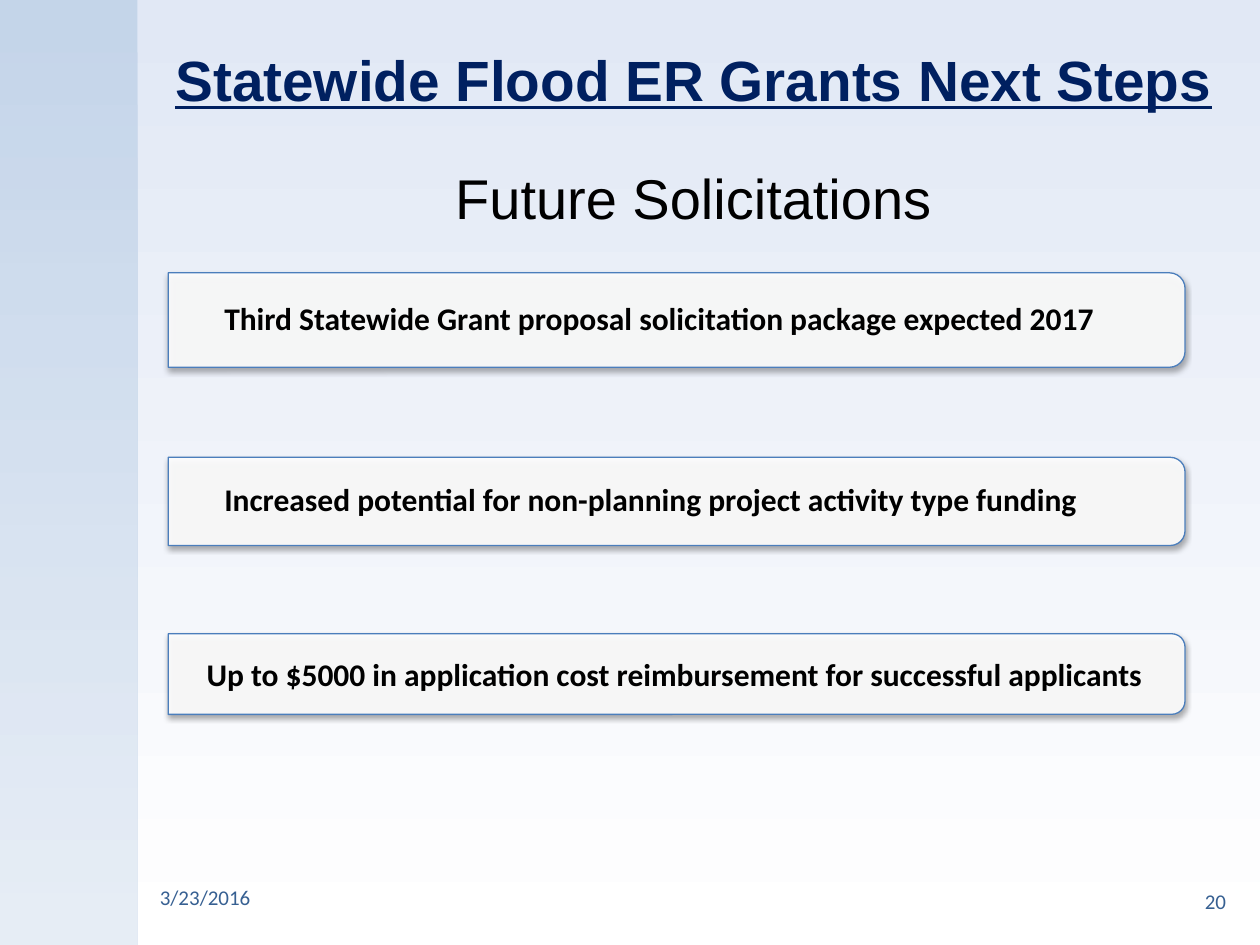
from lxml import etree
from pptx import Presentation
from pptx.dml.color import RGBColor
from pptx.enum.shapes import MSO_SHAPE
from pptx.enum.text import MSO_ANCHOR, MSO_AUTO_SIZE, PP_ALIGN
from pptx.oxml.ns import qn
from pptx.util import Inches, Pt

COLORS = {
    "sky": "E1E8F5", "white": "FFFFFF", "band_top": "B9CDE5", "band_bottom": "DCE6F2",
    "navy": "002060", "black": "000000", "footer": "376092", "outline": "4B7EBC",
}


def style_text(shape, text, size, color, font="Calibri", align=PP_ALIGN.LEFT,
               bold=False, anchor=MSO_ANCHOR.MIDDLE):
    frame = shape.text_frame
    frame.text = text
    frame.word_wrap = True
    frame.auto_size = MSO_AUTO_SIZE.NONE
    frame.vertical_anchor = anchor
    paragraph = frame.paragraphs[0]
    paragraph.alignment = align
    paragraph.font.name = font
    paragraph.font.size = Pt(size)
    paragraph.font.bold = bold
    paragraph.font.color.rgb = RGBColor.from_string(COLORS[color])
    return paragraph


def fill_gradient(fill, top, bottom):
    fill.gradient()
    fill.gradient_angle = 270
    for stop, name in zip(fill.gradient_stops, (top, bottom)):
        stop.color.rgb = RGBColor.from_string(COLORS[name])


presentation = Presentation()
presentation.slide_width = Inches(10)
presentation.slide_height = Inches(7.5)
slide = presentation.slides.add_slide(presentation.slide_layouts[1])
shapes = slide.shapes
fill_gradient(slide.background.fill, "sky", "white")

side_band = shapes.add_shape(MSO_SHAPE.RECTANGLE, 0, 0, Inches(1.09), Inches(7.5))
side_band.shadow.inherit = False
side_band.line.fill.background()
fill_gradient(side_band.fill, "band_top", "band_bottom")
for color in side_band.fill._xPr.iter(qn("a:srgbClr")):
    etree.SubElement(color, qn("a:alpha"), val="70000")

title, body = shapes.title, slide.placeholders[1]
for placeholder, top, height in ((title, 0, 1.25), (body, 1.25, 5.58)):
    placeholder.left, placeholder.top = Inches(1.17), Inches(top)
    placeholder.width, placeholder.height = Inches(8.67), Inches(height)
heading = style_text(title, "Statewide Flood ER Grants Next Steps", 32.4, "navy",
                     "Arial", PP_ALIGN.CENTER, True)
heading.font.underline = True
subheading = style_text(body, "Future Solicitations", 32, "black", "Arial",
                        PP_ALIGN.CENTER, anchor=MSO_ANCHOR.TOP)
properties = subheading._p.get_or_add_pPr()
properties.set("marL", "0")
properties.set("indent", "0")
properties.insert_element_before(etree.Element(qn("a:buNone")), "a:tabLst", "a:defRPr")

for text, left, top, align in (
    ("3/23/2016", 1.17, 6.92, PP_ALIGN.LEFT),
    ("20", 7.5, 6.95, PP_ALIGN.RIGHT),
):
    footer = shapes.add_textbox(Inches(left), Inches(top), Inches(2.33), Inches(0.4))
    style_text(footer, text, 12, "footer", align=align)

CARD_CENTER, CARD_LENGTH = 5.37, 8.07
cards = (
    ("Third Statewide Grant proposal solicitation package expected 2017", 2.54, 0.75, False),
    ("Increased potential for non-planning project activity type funding", 3.98, 0.7, False),
    ("Up to $5000 in application cost reimbursement for successful applicants",
     5.35, 0.64, True),
)
for text, middle, height, centered in cards:
    card = shapes.add_shape(
        MSO_SHAPE.ROUND_2_SAME_RECTANGLE,
        Inches(CARD_CENTER - height / 2), Inches(middle - CARD_LENGTH / 2),
        Inches(height), Inches(CARD_LENGTH))
    card.rotation = 90
    card.fill.solid()
    card.fill.fore_color.rgb = RGBColor.from_string(COLORS["white"])
    fill_color = card.fill._xPr.find(".//" + qn("a:srgbClr"))
    etree.SubElement(fill_color, qn("a:alpha"), val="90000")
    card.line.color.rgb = RGBColor.from_string(COLORS["outline"])
    card.line.width = Pt(0.75)
    card.shadow.inherit = False
    effects = card._element.spPr.find(qn("a:effectLst"))
    shadow = etree.SubElement(effects, qn("a:outerShdw"), blurRad=str(Pt(3.1)),
                              dist=str(Pt(1.8)), dir="5400000", rotWithShape="0")
    shadow_color = etree.SubElement(shadow, qn("a:srgbClr"), val=COLORS["black"])
    etree.SubElement(shadow_color, qn("a:alpha"), val="35000")

    if centered:
        style_text(card, text, 18, "black", align=PP_ALIGN.CENTER, bold=True)
        card.text_frame._txBody.bodyPr.set("vert", "vert270")
    else:
        label = shapes.add_textbox(Inches(1.54), Inches(middle - 0.34),
                                   Inches(7.87), Inches(0.68))
        paragraph = style_text(label, text, 18, "black", bold=True)
        paragraph.line_spacing = 0.9
        frame = label.text_frame
        frame.margin_left = Inches(0.24)
        frame.margin_top = frame.margin_right = frame.margin_bottom = Inches(0.02)

presentation.save("out.pptx")
